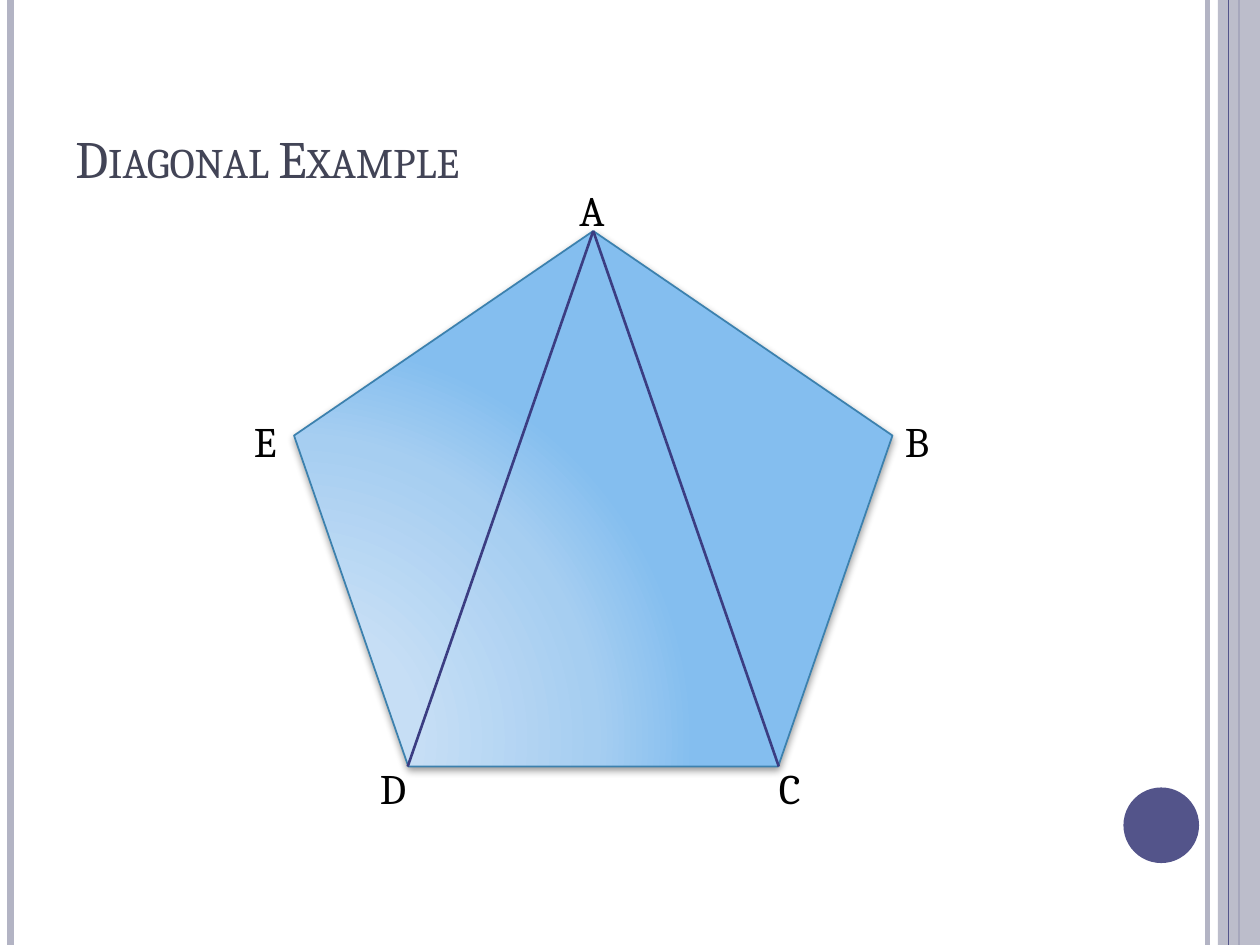
from lxml import etree
from pptx import Presentation
from pptx.dml.color import RGBColor
from pptx.enum.shapes import MSO_CONNECTOR, MSO_SHAPE
from pptx.enum.text import MSO_ANCHOR
from pptx.oxml import parse_xml
from pptx.oxml.ns import qn
from pptx.util import Inches, Pt

STRAIGHT = MSO_CONNECTOR.STRAIGHT
RECT, OVAL, PENTAGON = MSO_SHAPE.RECTANGLE, MSO_SHAPE.OVAL, MSO_SHAPE.REGULAR_PENTAGON
LILAC = RGBColor(0xB3, 0xB4, 0xC4)
INDIGO = RGBColor(0x53, 0x54, 0x8A)
SLATE = RGBColor(0x42, 0x44, 0x56)
DIAGONAL = RGBColor(0x3B, 0x3D, 0x82)
EDGE = RGBColor(0x3C, 0x81, 0xAE)
BLACK = RGBColor(0, 0, 0)
NS = "http://schemas.openxmlformats.org/drawingml/2006/main"

prs = Presentation()
prs.slide_width, prs.slide_height = Inches(10), Inches(7.5)
s = prs.slides.add_slide(prs.slide_layouts[6])
COLS, ROWS = 120, 90
U = prs.slide_width // COLS  # square grid unit


def add_line(x1, y1, x2, y2, color, width):
    c = s.shapes.add_connector(STRAIGHT, *(round(v * U) for v in (x1, y1, x2, y2)))
    c.line.color.rgb = color
    c.line.width = Pt(width)
    etree.SubElement(c._element.spPr, qn("a:effectLst"))
    return c


def add_text(text, x, y, w, h, size, color):
    tb = s.shapes.add_textbox(*(round(v * U) for v in (x, y, w, h)))
    tf = tb.text_frame
    tf.text = text
    tf.word_wrap = True
    r = tf.paragraphs[0].runs[0]
    r.font.name, r.font.size, r.font.color.rgb = "Cambria", Pt(size), color
    return tf, r


# Side stripes, the translucent band and the round marker
for x, color, width in [(115, LILAC, 3), (1, LILAC, 4.5), (118, INDIGO, 1.5)]:
    add_line(x, 0, x, ROWS, color, width)
for kind, x, y, w, h, color in [(RECT, 116, 0, 4, ROWS, LILAC),
                                (OVAL, 107, 75, 7.2, 7.2, INDIGO)]:
    sp = s.shapes.add_shape(kind, *(round(v * U) for v in (x, y, w, h)))
    sp.shadow.inherit = False
    sp.fill.solid()
    sp.fill.fore_color.rgb = color
    sp.line.fill.background()
    if kind == RECT:
        clr = sp._element.spPr.find(".//" + qn("a:srgbClr"))
        etree.SubElement(clr, qn("a:alpha"), val="87000")
        add_line(117, 0, 117, ROWS, INDIGO, 0.75)

# Title in small caps
tf, r = add_text("Diagonal Example", 6, 3.6, 98, 15, 30, SLATE)
tf.vertical_anchor = MSO_ANCHOR.BOTTOM
r.font._element.set("cap", "small")

# Pentagon with a radial gradient and a soft shadow
left, top, width, height = 28, 22, 57, 51
pentagon = s.shapes.add_shape(PENTAGON, left * U, top * U, width * U, height * U)
pentagon.line.color.rgb = EDGE
pentagon.line.width = Pt(1)
pentagon.fill.background()
pentagon.shadow.inherit = False
spPr = pentagon._element.spPr
stops = [(0, "CBE1F6"), (30, "C6DEF5"), (75, "A6CEF1"), (100, "84BEEF")]
stop_xml = "".join(f'<a:gs pos="{pos * 1000}"><a:srgbClr val="{c}"/></a:gs>'
                   for pos, c in stops)
spPr.replace(spPr.find(qn("a:noFill")), parse_xml(
    f'<a:gradFill xmlns:a="{NS}"><a:gsLst>{stop_xml}</a:gsLst><a:path path="circle">'
    '<a:fillToRect l="5000" t="100000" r="120000" b="10000"/></a:path></a:gradFill>'))
spPr.find(qn("a:effectLst")).append(parse_xml(
    f'<a:outerShdw xmlns:a="{NS}" blurRad="{Pt(4)}" dist="{Pt(2)}" dir="5400000" '
    'rotWithShape="0"><a:srgbClr val="000000"><a:alpha val="40000"/></a:srgbClr>'
    '</a:outerShdw>'))

# Diagonals from A to D and C
apex = left + width / 2
for share in (0.19, 0.81):
    add_line(apex, top, left + share * width, top + height, DIAGONAL, 1.5)

# Vertex labels
for name, x, y in [("A", 54, 17), ("D", 35, 72), ("C", 73, 72),
                   ("E", 23, 39), ("B", 85, 39)]:
    add_text(name, x, y, 5, 6, 24, BLACK)

prs.save("out.pptx")
